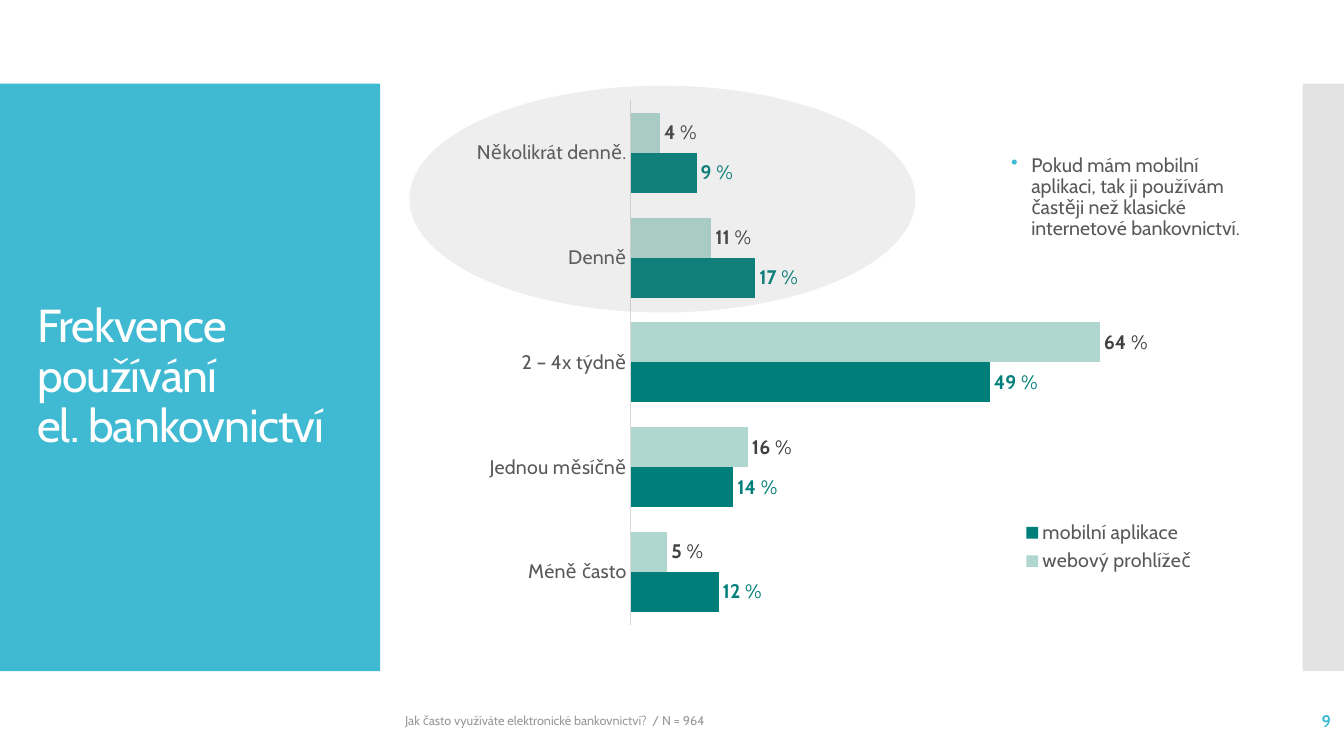
from dataclasses import dataclass

from lxml import etree
from pptx import Presentation
from pptx import util as u
from pptx.chart.data import CategoryChartData
from pptx.dml.color import RGBColor
from pptx.enum import chart as charts, shapes, text
from pptx.oxml import parse_xml
from pptx.oxml.ns import nsdecls, qn


@dataclass(frozen=True)
class Theme:
    font: str = "Cabin"
    accent: str = "40BAD2"
    white: str = "FFFFFF"
    body: str = "595959"
    muted: str = "989898"
    axis: str = "D9D9D9"
    side: str = "C8C8C8"
    highlight: str = "808080"
    web: str = "AFD7CF"
    mobile: str = "007E79"
    web_label: str = "404040"
    title_size: float = 33
    body_size: float = 14
    note_size: float = 9
    number_size: float = 12


theme = Theme()


def add_text(content, box, size, color, bold=False, align=text.PP_ALIGN.LEFT,
             anchor=text.MSO_ANCHOR.MIDDLE, line_spacing=1.0, tracking=0,
             space_after=0, bullet=None):
    shape = slide.shapes.add_textbox(*[u.Inches(length) for length in box])
    frame = shape.text_frame
    frame.word_wrap = True
    frame.vertical_anchor = anchor
    paragraph = frame.paragraphs[0]
    paragraph.text = content
    if bullet:
        properties = paragraph._p.get_or_add_pPr()
        properties.set("marL", str(u.Inches(0.75)))
        properties.set("indent", str(u.Inches(-0.2)))
        properties.append(parse_xml(
            f'<a:buClr {nsdecls("a")}><a:srgbClr val="{theme.accent}"/></a:buClr>'))
        properties.append(parse_xml(f'<a:buChar {nsdecls("a")} char="{bullet}"/>'))
    paragraph.alignment = align
    paragraph.line_spacing = line_spacing
    paragraph.space_after = u.Pt(space_after)
    for run in paragraph.runs:
        style_font(run.font, size, color, bold)
        if tracking:
            run._r.get_or_add_rPr().set("spc", str(round(tracking * 100)))


def style_font(font, size, color, bold=False):
    font.name = theme.font
    font.size = u.Pt(size)
    font.bold = bold
    font.color.rgb = RGBColor.from_string(color)


presentation = Presentation()
presentation.slide_width = u.Inches(13.33)
presentation.slide_height = u.Inches(7.5)
slide = presentation.slides.add_slide(presentation.slide_layouts[6])

chart_data = CategoryChartData(number_format="0%")
chart_data.categories = ["Několikrát denně.", "Denně", "2 – 4x týdně", "Jednou měsíčně", "Méně často"]
chart_data.add_series("webový prohlížeč", [0.04, 0.11, 0.64, 0.16, 0.05])
chart_data.add_series("mobilní aplikace", [0.09, 0.17, 0.49, 0.14, 0.12])
chart = slide.shapes.add_chart(
    charts.XL_CHART_TYPE.BAR_CLUSTERED, u.Inches(4.58), u.Inches(0.99),
    u.Inches(8.73), u.Inches(5.51), chart_data).chart
chart.has_title = False
style_font(chart.font, theme.body_size, theme.body)

category_axis = chart.category_axis
category_axis.reverse_order = True
category_axis.major_tick_mark = charts.XL_TICK_MARK.NONE
category_axis.format.line.color.rgb = RGBColor.from_string(theme.axis)
category_axis.format.line.width = u.Pt(0.75)
style_font(category_axis.tick_labels.font, theme.body_size, theme.body)
value_axis = chart.value_axis
value_axis.minimum_scale = 0
value_axis.maximum_scale = 0.7
value_axis.has_major_gridlines = False
value_axis.visible = False

plot = chart.plots[0]
plot.gap_width = 62
plot.overlap = 0
plot.vary_by_categories = False
series_colors = [(theme.web, theme.web_label), (theme.mobile, theme.mobile)]
for series, (fill, label_color) in zip(plot.series, series_colors):
    series.format.fill.solid()
    series.format.fill.fore_color.rgb = RGBColor.from_string(fill)
    labels = series.data_labels
    labels.show_value = True
    labels.number_format = "0%"
    labels.number_format_is_linked = False
    labels.position = charts.XL_LABEL_POSITION.OUTSIDE_END
    style_font(labels.font, theme.body_size, label_color, True)
    for index, value in enumerate(series.values):
        label = series.points[index].data_label
        paragraph = label.text_frame.paragraphs[0]
        for content, bold in [(f"{value * 100:.0f}", True), (" %", False)]:
            run = paragraph.add_run()
            run.text = content
            style_font(run.font, theme.body_size, label_color, bold)
        label.position = charts.XL_LABEL_POSITION.OUTSIDE_END

chart.has_legend = True
legend = chart.legend
legend.position = charts.XL_LEGEND_POSITION.RIGHT
legend.include_in_layout = False
style_font(legend.font, theme.body_size, theme.body)

layouts = [
    (chart._chartSpace.chart.plotArea, True, (0.192, 0, 0.583, 0.945)),
    (legend._element, False, (0.63, 0.75, 0.21, 0.11)),
]
for element, inner, bounds in layouts:
    for old_layout in element.findall(qn("c:layout")):
        element.remove(old_layout)
    layout = etree.Element(qn("c:layout"))
    manual = etree.SubElement(layout, qn("c:manualLayout"))
    settings = [("layoutTarget", "inner")] if inner else []
    settings += [("xMode", "edge"), ("yMode", "edge"), *zip("xywh", bounds)]
    for name, value in settings:
        etree.SubElement(manual, qn(f"c:{name}")).set("val", str(value))
    element.insert(0 if inner else 1, layout)

rectangle, oval = shapes.MSO_SHAPE.RECTANGLE, shapes.MSO_SHAPE.OVAL
panels = [
    (rectangle, (0, 0.83, 3.77, 5.83), theme.accent, 100),
    (rectangle, (12.92, 0.83, 0.41, 5.83), theme.side, 50),
    (oval, (4.06, 0.85, 5.02, 2.25), theme.highlight, 13),
]
for kind, box, color, opacity in panels:
    shape = slide.shapes.add_shape(kind, *[u.Inches(length) for length in box])
    shape.shadow.inherit = False
    shape.line.fill.background()
    shape.fill.solid()
    shape.fill.fore_color.rgb = RGBColor.from_string(color)
    if opacity < 100:
        color_element = shape._element.spPr.find(f".//{qn('a:srgbClr')}")
        etree.SubElement(color_element, qn("a:alpha")).set("val", str(opacity * 1000))

add_text("Frekvence používání \vel. bankovnictví", (0.27, 1.23, 3.12, 5.03),
         theme.title_size, theme.white, line_spacing=0.9, tracking=-0.6)
add_text("Jak často využíváte elektronické bankovnictví?  / N = 964",
         (3.92, 6.95, 8.38, 0.4), theme.note_size, theme.muted)
add_text("9", (11.63, 6.95, 1.67, 0.4), theme.number_size, theme.accent,
         bold=True, align=text.PP_ALIGN.RIGHT)
add_text("Pokud mám mobilní aplikaci, tak ji používám častěji než klasické "
         "internetové bankovnictví.", (9.38, 1.49, 3.22, 1.44),
         theme.body_size, theme.body, anchor=text.MSO_ANCHOR.TOP,
         line_spacing=0.9, space_after=2.5, bullet="•")

presentation.save("out.pptx")
